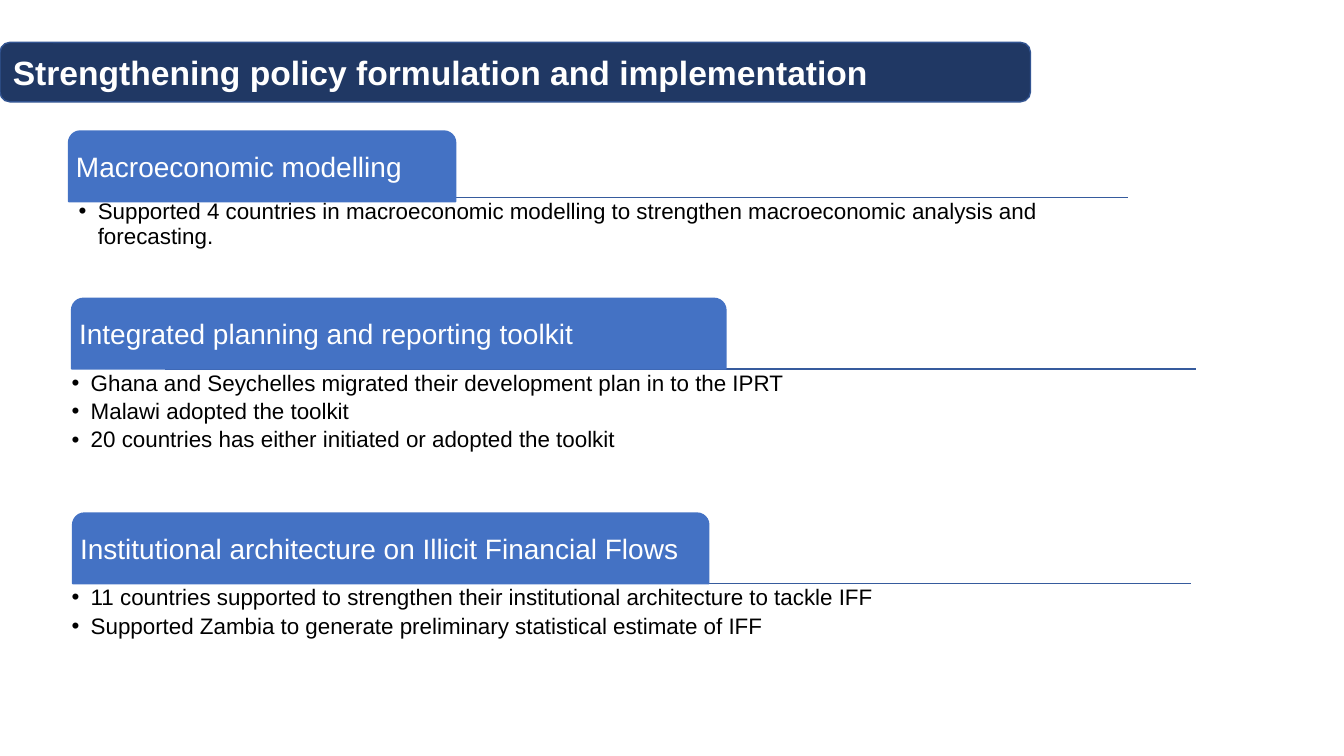
from lxml import etree
from pptx import Presentation
from pptx import util as u
from pptx.dml.color import RGBColor
from pptx.enum import shapes, text
from pptx.oxml.ns import qn

NAVY = RGBColor(0x20, 0x38, 0x64)
NAVY_EDGE = RGBColor(0x32, 0x54, 0x91)
BLUE = RGBColor(0x44, 0x72, 0xC4)
RULE_BLUE = RGBColor(0x36, 0x5B, 0x9D)
WHITE = RGBColor(0xFF, 0xFF, 0xFF)
BLACK = RGBColor(0, 0, 0)

TAB_HEIGHT = 0.7
RULE_LENGTH = 10.22


class PolicySlide:
    font = "Arial"
    line_width = u.Pt(1)

    def __init__(self, deck):
        self.slide = deck.slides.add_slide(deck.slide_layouts[6])

    def style(self, paragraph, size, color, bold=False):
        paragraph.alignment = text.PP_ALIGN.LEFT
        font = paragraph.font
        font.name, font.size, font.bold = self.font, u.Pt(size), bold
        font.color.rgb = color

    def inset(self, frame, margin):
        frame.margin_left = frame.margin_right = u.Inches(margin)
        frame.margin_top = frame.margin_bottom = u.Inches(margin)

    def banner(self, preset, box, wording, fill, edge, size, bold=False):
        banner = self.slide.shapes.add_shape(preset, *map(u.Inches, box))
        banner.shadow.inherit = False
        banner.fill.solid()
        banner.fill.fore_color.rgb = fill
        banner.line.color.rgb = edge
        banner.line.width = self.line_width
        frame = banner.text_frame
        frame.word_wrap = True
        frame.vertical_anchor = text.MSO_ANCHOR.MIDDLE
        frame.text = wording
        self.style(frame.paragraphs[0], size, WHITE, bold)
        return frame

    def title(self, wording):
        self.banner(shapes.MSO_SHAPE.ROUNDED_RECTANGLE, (0, 0.42, 10.22, 0.59),
                    wording, NAVY, NAVY_EDGE, 24, bold=True)

    def tab(self, left, top, width, wording):
        frame = self.banner(shapes.MSO_SHAPE.ROUND_2_SAME_RECTANGLE,
                            (left, top, width, TAB_HEIGHT), wording, BLUE, BLUE, 20)
        self.inset(frame, 0.04)
        frame.paragraphs[0].line_spacing = 0.9

    def rule(self, left, top):
        rule = self.slide.shapes.add_connector(
            shapes.MSO_CONNECTOR.STRAIGHT, u.Inches(left), u.Inches(top),
            u.Inches(left + RULE_LENGTH), u.Inches(top))
        rule.line.color.rgb = RULE_BLUE
        rule.line.width = self.line_width
        etree.SubElement(rule._element.spPr, qn("a:effectLst"))

    def bullets(self, box, points):
        frame = self.slide.shapes.add_textbox(*map(u.Inches, box)).text_frame
        frame.word_wrap = True
        self.inset(frame, 0.03)
        frame.text = "\n".join(points)
        for point in frame.paragraphs:
            properties = point._p.get_or_add_pPr()
            properties.set("marL", str(u.Inches(0.19)))
            properties.set("indent", str(-u.Inches(0.19)))
            etree.SubElement(properties, qn("a:buFont")).set("typeface", self.font)
            etree.SubElement(properties, qn("a:buChar")).set("char", "•")
            point.line_spacing = 0.9
            point.space_after = u.Pt(3)
            self.style(point, 16, BLACK)


SECTIONS = [
    ("Macroeconomic modelling", (0.68, 1.3, 3.84), (0.97, 1.96),
     (0.75, 1.96, 10.09, 0.96),
     ["Supported 4 countries in macroeconomic modelling to strengthen "
      "macroeconomic analysis and forecasting."]),
    ("Integrated planning and reporting toolkit", (0.71, 2.96, 6.49), (1.64, 3.66),
     (0.68, 3.66, 10.22, 1.4),
     ["Ghana and Seychelles migrated their development plan in to the IPRT",
      "Malawi adopted the toolkit",
      "20 countries has either initiated or adopted the toolkit"]),
    ("Institutional architecture on Illicit Financial Flows", (0.72, 5.09, 6.31),
     (1.59, 5.79), (0.68, 5.79, 10.22, 1.4),
     ["11 countries supported to strengthen their institutional architecture to tackle IFF",
      "Supported Zambia to generate preliminary statistical estimate of IFF"]),
]


def main():
    deck = Presentation()
    deck.slide_width, deck.slide_height = u.Inches(13.33), u.Inches(7.5)
    policy = PolicySlide(deck)
    policy.title("Strengthening policy formulation and implementation")
    for heading, tab_place, rule_start, points_box, points in SECTIONS:
        policy.rule(*rule_start)
        policy.tab(*tab_place, heading)
        policy.bullets(points_box, points)
    deck.save("out.pptx")


if __name__ == "__main__":
    main()
